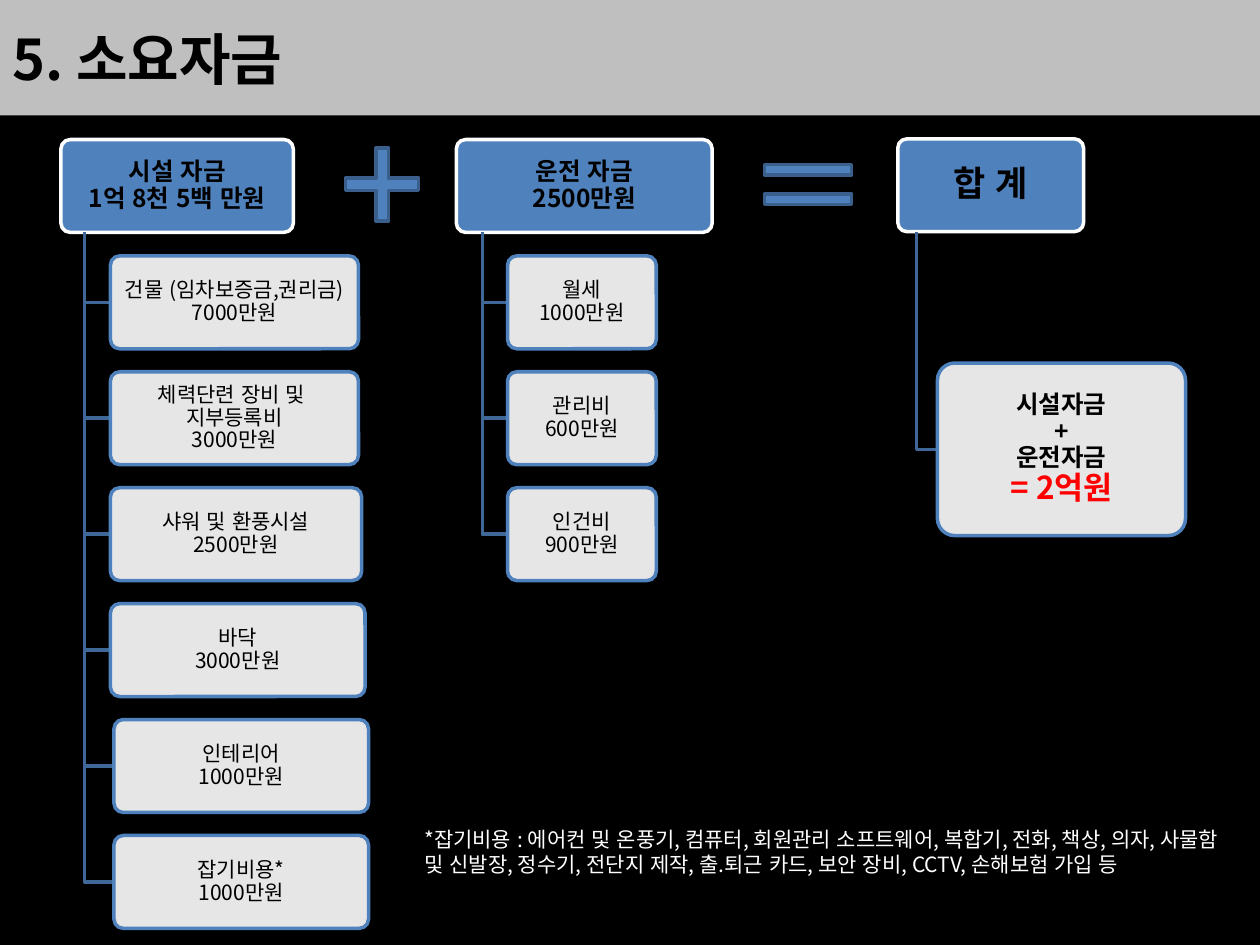
from dataclasses import dataclass

from lxml import etree
from pptx import Presentation
from pptx.dml.color import RGBColor
from pptx.enum.lang import MSO_LANGUAGE_ID
from pptx.enum.shapes import MSO_SHAPE
from pptx.enum.text import MSO_ANCHOR, PP_ALIGN
from pptx.oxml.ns import qn
from pptx.util import Pt

RECT, ROUND = MSO_SHAPE.RECTANGLE, MSO_SHAPE.ROUNDED_RECTANGLE
PLUS, EQUAL = MSO_SHAPE.MATH_PLUS, MSO_SHAPE.MATH_EQUAL
MIDDLE, LEFT, CENTER = MSO_ANCHOR.MIDDLE, PP_ALIGN.LEFT, PP_ALIGN.CENTER
KOREAN = MSO_LANGUAGE_ID.KOREAN


@dataclass(frozen=True)
class Theme:
    font: str = "Noto Sans CJK KR"
    black: str = "000000"
    white: str = "FFFFFF"
    banner: str = "BFBFBF"
    blue: str = "4F81BD"
    branch: str = "3F6797"
    sign_line: str = "3A5F8C"
    red: str = "FF0000"
    title: int = 32
    total: int = 20
    result: int = 18
    head: int = 14
    body: int = 12
    line: int = 2


# Layout in points
BOX_H = 53.1
HEAD_TOP = 79.7
FIRST_TOP = 146.2
STEP = 66.24


def write(p, text, theme, size, color, bold=False):
    """Append text to a paragraph; each newline becomes a line break."""
    for i, line in enumerate(text.split("\n")):
        if i:
            p.add_line_break()
        if not line:
            continue
        r = p.add_run()
        r.text = line
        r.font.name = theme.font
        r.font.size = Pt(size)
        r.font.bold = bold
        r.font.language_id = KOREAN
        r.font.color.rgb = RGBColor.from_string(color)
        ea = etree.SubElement(r.font._element, qn("a:ea"))
        ea.set("typeface", theme.font)


class Board:
    def __init__(self, slide, theme):
        self.s, self.t = slide, theme

    def background(self, color):
        fill = self.s.background.fill
        fill.solid()
        fill.fore_color.rgb = RGBColor.from_string(color)

    def shape(self, kind, x, y, w, h, fill, line=None, adj=(), alpha=None):
        sp = self.s.shapes.add_shape(kind, Pt(x), Pt(y), Pt(w), Pt(h))
        sp.shadow.inherit = False
        sp.fill.solid()
        sp.fill.fore_color.rgb = RGBColor.from_string(fill)
        if alpha:
            clr = sp._element.spPr.find(qn("a:solidFill"))[0]
            etree.SubElement(clr, qn("a:alpha")).set("val", str(alpha * 1000))
        if line:
            sp.line.color.rgb = RGBColor.from_string(line)
            sp.line.width = Pt(self.t.line)
        else:
            sp.line.fill.background()
        for i, value in enumerate(adj):
            sp.adjustments[i] = value
        return sp

    def banner(self, text, h):
        sp = self.shape(RECT, 0, 0, 720, h, self.t.banner)
        sp.text_frame.vertical_anchor = MIDDLE
        p = sp.text_frame.paragraphs[0]
        p.alignment = LEFT
        write(p, text, self.t, self.t.title, self.t.black, bold=True)

    def box(self, x, y, w, h, text, size, bold=False, head=False):
        """Rounded box with centred text; returns its paragraph."""
        t = self.t
        look = dict(fill=t.blue, line=t.white) if head else dict(
            fill=t.white, line=t.blue, alpha=90)
        sp = self.shape(ROUND, x, y, w, h, adj=[0.1], **look)
        tf = sp.text_frame
        tf.word_wrap = True
        tf.vertical_anchor = MIDDLE
        tf.margin_left = tf.margin_right = Pt(2.2)
        tf.margin_top = tf.margin_bottom = Pt(1.5)
        p = tf.paragraphs[0]
        p.alignment = CENTER
        p.line_spacing = 0.9
        write(p, text, t, size, t.black, bold)
        return p

    def branch(self, x, top, right, y):
        """Elbow from a heading down and across to a box."""
        fb = self.s.shapes.build_freeform(Pt(x), Pt(top))
        fb.add_line_segments([(Pt(x), Pt(y)), (Pt(right), Pt(y))], close=False)
        sp = fb.convert_to_shape()
        sp.shadow.inherit = False
        sp.fill.background()
        sp.line.color.rgb = RGBColor.from_string(self.t.branch)
        sp.line.width = Pt(self.t.line)

    def column(self, x, w, heading, trunk, items):
        """Heading box over evenly spaced items of (left, width, text)."""
        self.box(x, HEAD_TOP, w, BOX_H, heading, self.t.head, True, head=True)
        for i, (left, width, text) in enumerate(items):
            top = FIRST_TOP + i * STEP
            self.branch(trunk, HEAD_TOP + BOX_H, left, top + BOX_H / 2)
            self.box(left, top, width, BOX_H, text, self.t.body)

    def note(self, x, y, w, h, text):
        tf = self.s.shapes.add_textbox(Pt(x), Pt(y), Pt(w), Pt(h)).text_frame
        tf.word_wrap = True
        write(tf.paragraphs[0], text, self.t, self.t.body, self.t.white)


def main():
    t = Theme()
    prs = Presentation()
    prs.slide_width, prs.slide_height = Pt(720), Pt(540)
    b = Board(prs.slides.add_slide(prs.slide_layouts[6]), t)

    # Background and title
    b.background(t.black)
    b.banner("5. 소요자금", 66)

    # Facility funds
    b.column(34.8, 132.8, "시설 자금\n1억 8천 5백 만원", 48.3, [
        (63.1, 141.8, "건물 (임차보증금,권리금)\n7000만원"),
        (63.1, 141.8, "체력단련 장비 및 \n지부등록비\n3000만원"),
        (63.1, 143.6, "샤워 및 환풍시설\n2500만원"),
        (63.1, 145.5, "바닥\n3000만원"),
        (65.1, 145.5, "인테리어\n1000만원"),
        (65.1, 145.5, "잡기비용*\n1000만원"),
    ])

    # Operating funds
    monthly = ["월세\n1000만원", "관리비\n600만원", "인건비\n900만원"]
    b.column(260.8, 146.2, "운전 자금\n2500만원", 275.6,
             [(290, 85, text) for text in monthly])

    # Total
    b.box(513, 79.3, 106.2, BOX_H, "합 계", t.total, True, head=True)
    b.branch(523.7, 132.4, 535.7, 256.8)
    p = b.box(535.7, 207.5, 141.8, 98.6, "시설자금\n+\n운전자금\n", t.head, True)
    write(p, "= 2억원", t, t.result, t.red, bold=True)

    # Plus and equals signs
    b.shape(PLUS, 190, 77, 56.8, 56.8, t.blue, t.sign_line, [0.125])
    b.shape(EQUAL, 428, 82.8, 67.7, 45.4, t.blue, t.sign_line, [0.132, 0.241])

    # Footnote
    b.note(235.4, 468.7, 470.9, 51.1,
           "*잡기비용 : 에어컨 및 온풍기, 컴퓨터, 회원관리 소프트웨어, 복합기, "
           "전화, 책상, 의자, 사물함 및 신발장, 정수기, 전단지 제작, "
           "출.퇴근 카드, 보안 장비, CCTV, 손해보험 가입 등")

    prs.save("out.pptx")


if __name__ == "__main__":
    main()
